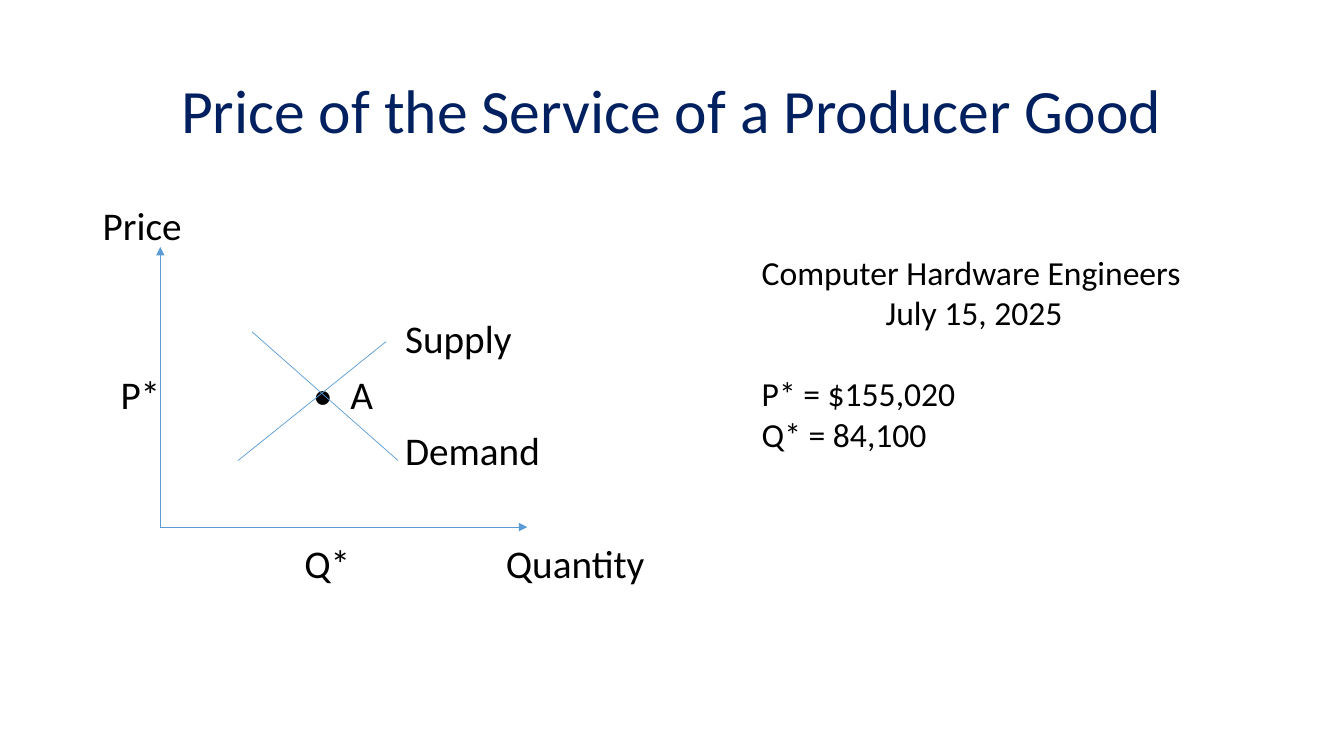
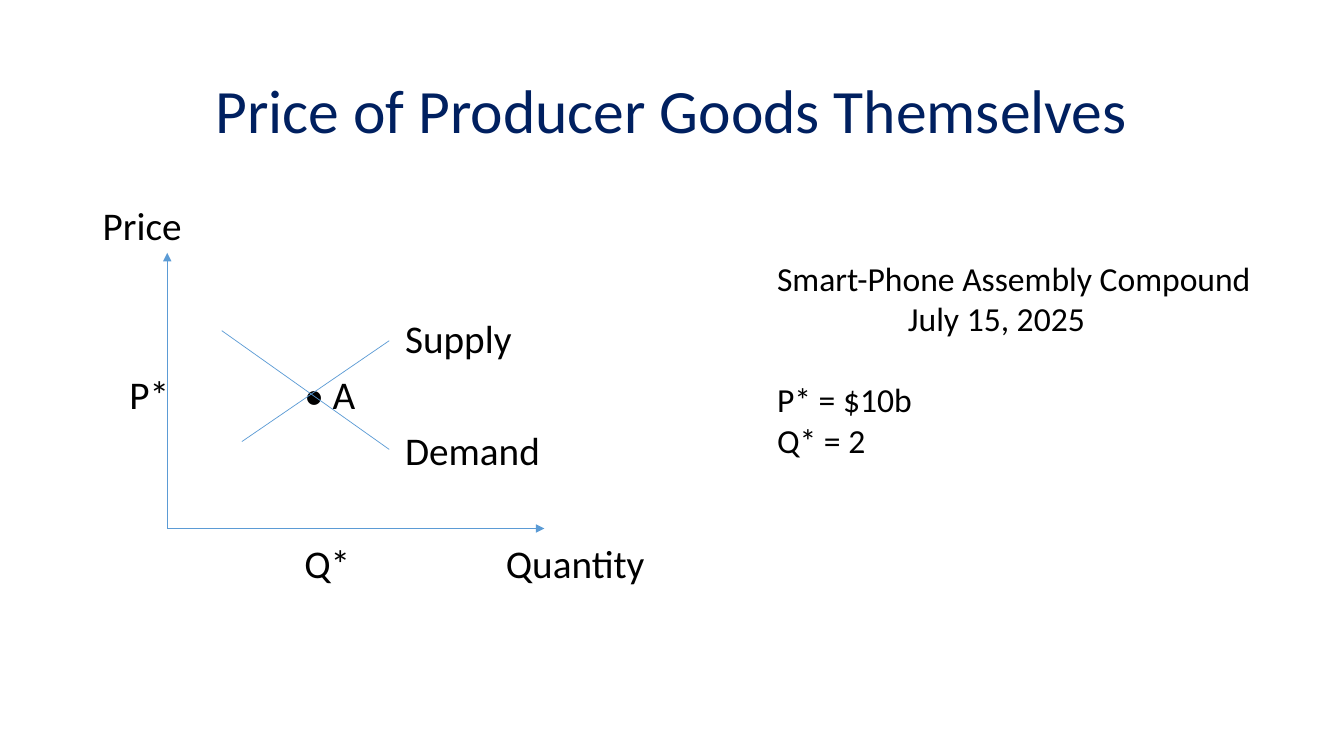
from dataclasses import dataclass

from lxml import etree
from pptx import Presentation
from pptx.dml.color import RGBColor
from pptx.enum.shapes import MSO_CONNECTOR
from pptx.enum.text import MSO_ANCHOR, PP_ALIGN
from pptx.oxml.ns import qn
from pptx.util import Pt

STRAIGHT = MSO_CONNECTOR.STRAIGHT
MIDDLE = MSO_ANCHOR.MIDDLE
CENTER = PP_ALIGN.CENTER


@dataclass(frozen=True)
class Theme:
    font: str = "Calibri"
    title_color: RGBColor = RGBColor(0x00, 0x20, 0x60)
    text_color: RGBColor = RGBColor(0x00, 0x00, 0x00)
    line_color: RGBColor = RGBColor(0x5B, 0x9B, 0xD5)
    title_size: int = 44
    label_size: int = 28
    note_size: int = 24
    line_width: float = 0.5
    tight: float = 0.9


THEME = Theme()
LABEL_LEFT, LABEL_TOP = 73.4, 147.6
TAB, ROW = 72, 40.25
LABEL_WIDTH, LABEL_HEIGHT = 120, 36

COMMON_LABELS = [
    ("Price", 0, 0),
    ("Supply", 3 * TAB, 2),
    ("Demand", 3 * TAB, 4),
    ("Q*", 2 * TAB, 6),
    ("Quantity", 4 * TAB, 6),
]

SLIDES = [
    dict(
        title="Price of the Service of a Producer Good",
        labels=[("P*", 12.7, 3), ("•", 150.3, 3), ("A", 176.9, 3)],
        origin=(114.5, 376.5), price_end=176.4, quantity_end=376.6,
        supply=((170, 329), (275.8, 244)),
        demand=((180, 237), (284.4, 329)),
        note_box=(537, 176.4, 320, 152.6), date_indent=88.5,
        note=("Computer Hardware Engineers", "July 15, 2025",
              "P* = $155,020", "Q* = 84,100"),
    ),
    dict(
        title="Price of Producer Goods Themselves",
        labels=[("P*", 19, 3), ("•", 144, 3), ("A", 164.2, 3)],
        origin=(119.5, 377.5), price_end=180.7, quantity_end=388.8,
        supply=((172.8, 315.4), (278, 243.4)),
        demand=((158.4, 236.2), (278, 321)),
        note_box=(548, 180.7, 360, 152.6), date_indent=93.5,
        note=("Smart-Phone Assembly Compound", "July 15, 2025",
              "P* = $10b", "Q* = 2"),
    ),
]


def set_font(p, size, color):
    p.font.name = THEME.font
    p.font.size = Pt(size)
    p.font.color.rgb = color


def add_title(s, text):
    sp = s.shapes.title
    sp.left, sp.top, sp.width, sp.height = Pt(66), Pt(28.8), Pt(828), Pt(104.4)
    tf = sp.text_frame
    tf.text = text
    tf.vertical_anchor = MIDDLE
    p = tf.paragraphs[0]
    p.alignment = CENTER
    p.line_spacing = THEME.tight
    set_font(p, THEME.title_size, THEME.title_color)


def add_label(s, text, offset, row):
    sp = s.shapes.add_textbox(Pt(LABEL_LEFT + offset), Pt(LABEL_TOP + row * ROW),
                              Pt(LABEL_WIDTH), Pt(LABEL_HEIGHT))
    tf = sp.text_frame
    tf.word_wrap = True
    tf.margin_left = tf.margin_right = tf.margin_top = tf.margin_bottom = 0
    p = tf.paragraphs[0]
    p.text = text
    p.line_spacing = THEME.tight
    set_font(p, THEME.label_size, THEME.text_color)


def add_line(s, start, end, arrow=False):
    line = s.shapes.add_connector(STRAIGHT, *map(Pt, start + end))
    line.line.color.rgb = THEME.line_color
    line.line.width = Pt(THEME.line_width)
    if arrow:
        etree.SubElement(line.line._get_or_add_ln(), qn("a:tailEnd"), type="triangle")
    etree.SubElement(line._element.spPr, qn("a:effectLst"))


def add_note(s, box, lines, date_indent):
    tf = s.shapes.add_textbox(*map(Pt, box)).text_frame
    tf.word_wrap = True
    tf.text = "\n".join(lines)
    for p in tf.paragraphs:
        set_font(p, THEME.note_size, THEME.text_color)
    date, price = tf.paragraphs[1:3]
    date._p.get_or_add_pPr().set("marL", str(Pt(date_indent)))
    price.space_before = Pt(29)


def add_market_slide(prs, market):
    s = prs.slides.add_slide(prs.slide_layouts[5])
    add_title(s, market["title"])
    for label in COMMON_LABELS + market["labels"]:
        add_label(s, *label)
    x, y = market["origin"]
    add_line(s, (x, y), (x, market["price_end"]), arrow=True)
    add_line(s, (x, y), (market["quantity_end"], y), arrow=True)
    add_line(s, *market["supply"])
    add_line(s, *market["demand"])
    add_note(s, market["note_box"], market["note"], market["date_indent"])


def main():
    prs = Presentation()
    prs.slide_width, prs.slide_height = Pt(960), Pt(540)
    for market in SLIDES:
        add_market_slide(prs, market)
    prs.save("out.pptx")


if __name__ == "__main__":
    main()
